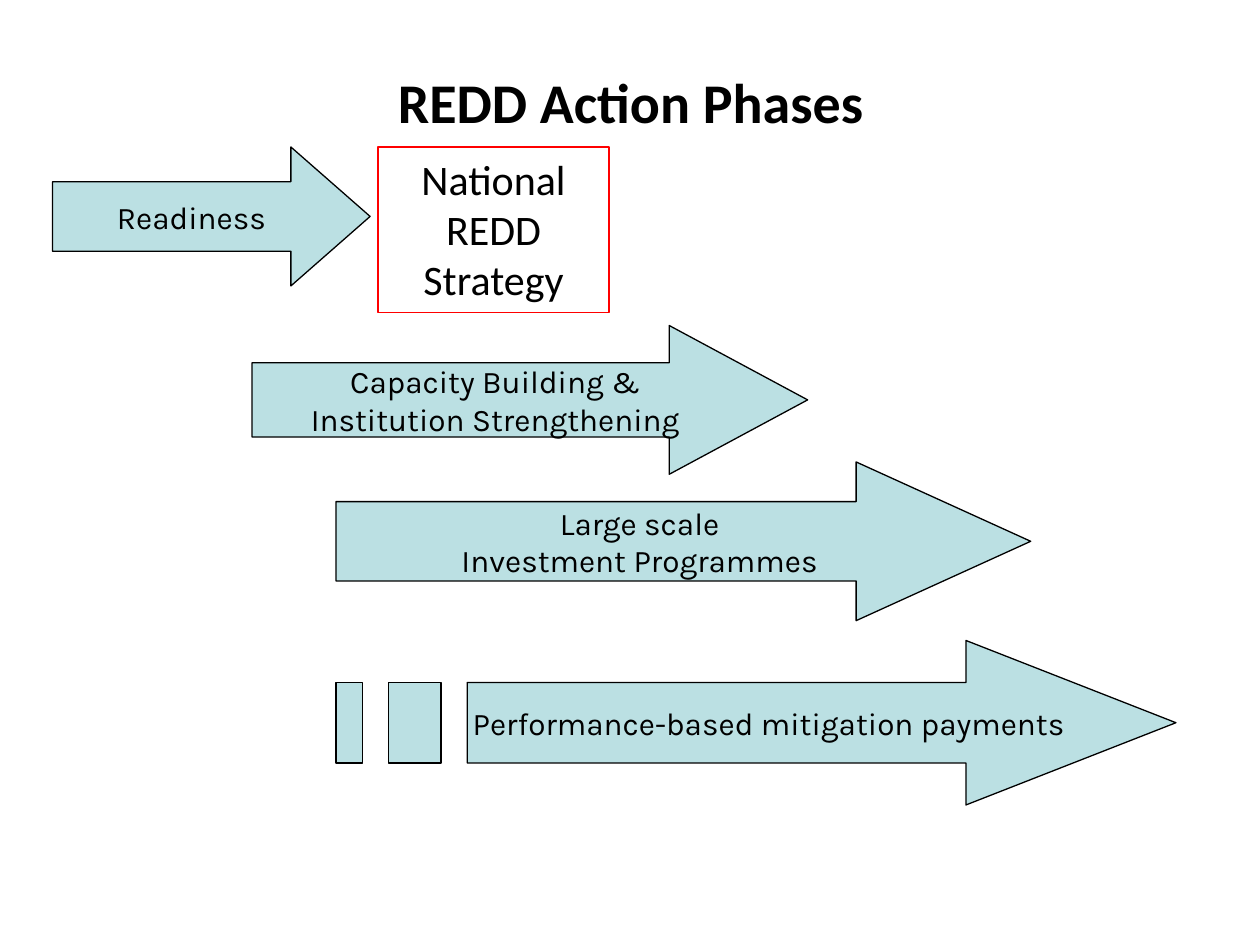
from pptx import Presentation
from pptx.dml.color import RGBColor
from pptx.enum.shapes import MSO_SHAPE
from pptx.enum.text import MSO_ANCHOR, PP_ALIGN
from pptx.util import Pt


def paint(shape, fill, line):
    shape.shadow.inherit = False
    if fill:
        shape.fill.solid()
        shape.fill.fore_color.rgb = RGBColor.from_string(fill)
    else:
        shape.fill.background()
    shape.line.color.rgb = RGBColor.from_string(line)
    shape.line.width = Pt(0.75)


def write(shape, text, font="Karla", size=18, bold=False, wrap=False,
          anchor=MSO_ANCHOR.MIDDLE):
    frame = shape.text_frame
    frame.text = text
    frame.word_wrap = wrap
    frame.vertical_anchor = anchor
    for para in frame.paragraphs:
        para.alignment = PP_ALIGN.CENTER
        para.font.name = font
        para.font.size = Pt(size)
        para.font.bold = bold
        para.font.color.rgb = RGBColor.from_string("000000")


deck = Presentation()
deck.slide_width, deck.slide_height = Pt(720), Pt(540)
slide = deck.slides.add_slide(deck.slide_layouts[5])
shapes = slide.shapes

# Title
title = shapes.title
title.left, title.top, title.width, title.height = Pt(36.5), Pt(20), Pt(648), Pt(75.6)
write(title, "REDD Action Phases", font="Calibri", size=32, bold=True, wrap=True)

# Phase arrows: text, left, top, width, height, head length / height
phases = [
    ("Large scale\nInvestment Programmes", 192, 264, 397, 90.7, 1.1),
    ("Readiness", 30, 84, 181.5, 79.4, 0.57),
    ("Capacity Building &\nInstitution Strengthening", 144, 186, 317.5, 85, 0.93),
]
for text, left, top, width, height, head in phases:
    arrow = shapes.add_shape(MSO_SHAPE.RIGHT_ARROW, Pt(left), Pt(top), Pt(width), Pt(height))
    arrow.adjustments[0], arrow.adjustments[1] = 0.5, head
    paint(arrow, "BBE0E3", "000000")
    write(arrow, text)

# Payments arrow with two stripes as its tail
top, high, mid, low, base = 366, 389.5, 413, 436.5, 460
parts = [[(552, top), (552, high), (267, high), (267, low), (552, low), (552, base), (672, mid)]]
for left, right in [(222, 252), (192, 207)]:
    parts.append([(left, high), (left, low), (right, low), (right, high)])
pen = shapes.build_freeform(*parts[0][0], scale=Pt(1))
pen.add_line_segments(parts[0][1:], close=True)
for part in parts[1:]:
    pen.move_to(*part[0])
    pen.add_line_segments(part[1:], close=True)
striped = pen.convert_to_shape()
paint(striped, "BBE0E3", "000000")
write(striped, "Performance-based mitigation payments")
striped.text_frame.margin_left = Pt(21.6)

# Strategy box
box = shapes.add_shape(MSO_SHAPE.RECTANGLE, Pt(216), Pt(84), Pt(132), Pt(94.5))
paint(box, None, "FF0000")
write(box, "National REDD Strategy", font="Calibri", size=24, wrap=True, anchor=MSO_ANCHOR.TOP)

deck.save("out.pptx")
